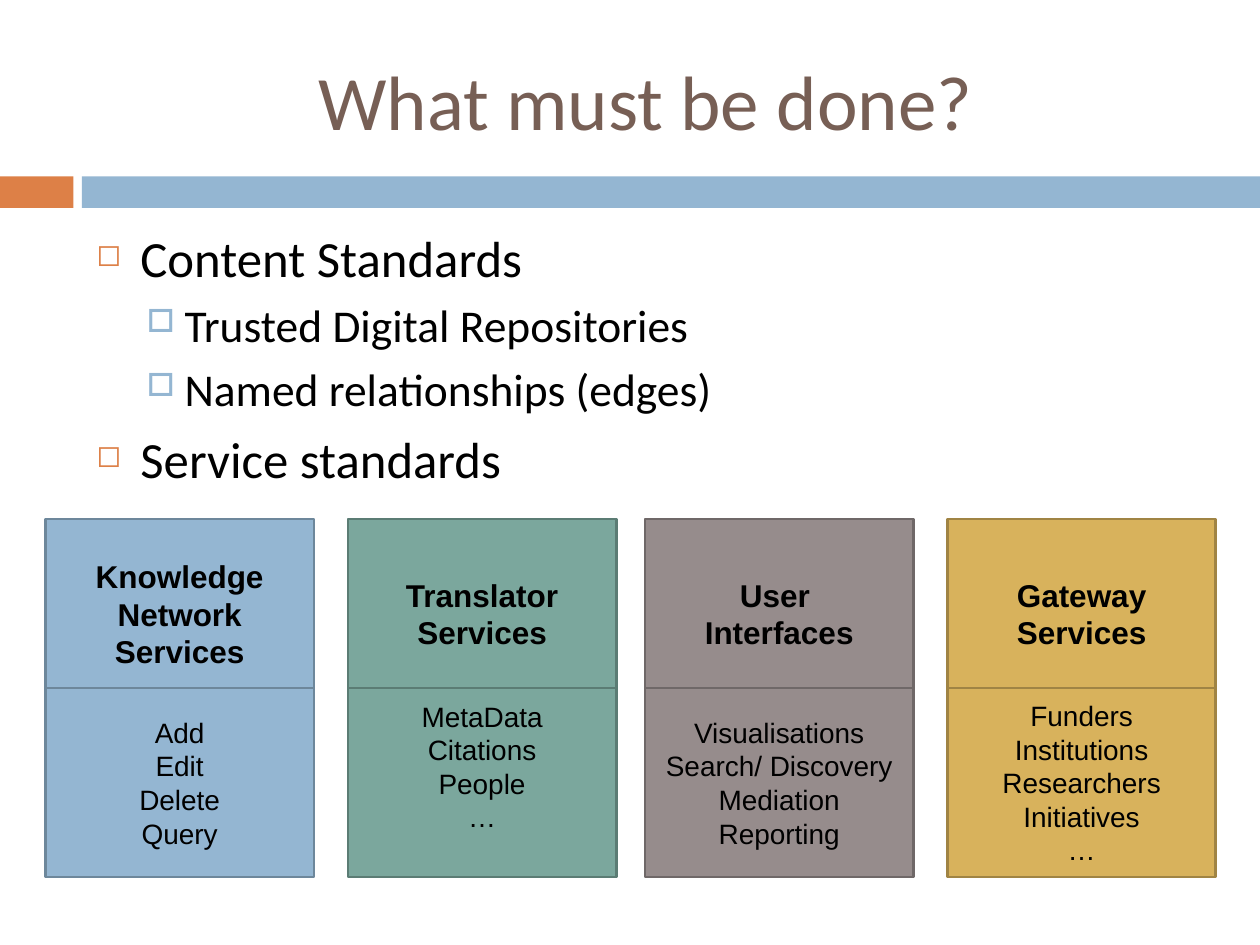
from lxml import etree
from pptx import Presentation
from pptx import util as u
from pptx.dml.color import RGBColor
from pptx.enum import shapes, text
from pptx.oxml import ns

COLORS = {
    "title": "775F55", "ink": "000000", "orange": "DD8047",
    "blue": "94B6D2", "blue_edge": "6D879B",
    "green": "7BA79D", "green_edge": "5B7C74",
    "taupe": "968C8C", "taupe_edge": "6F6868",
    "gold": "D8B25C", "gold_edge": "A08444",
}

# level: size, left indent, hanging indent, space before, mark, mark colour, mark %
BULLETS = [
    (29, 25.2, 25.2, 7, "◻", "orange", 60),
    (26, 50.4, 21.6, 5.5, "□", "blue", 70),
]

STANDARDS = [
    (0, "Content Standards"),
    (1, "Trusted Digital Repositories"),
    (1, "Named relationships (edges)"),
    (0, "Service standards"),
]

# left, colour, heading lines, detail lines, bottom inset of the details
SERVICES = [
    (26, "blue", ["Knowledge Network Services"],
     ["Add", "Edit", "Delete", "Query"], 3.6),
    (198.8, "green", ["Translator Services"],
     ["MetaData", "Citations", "People", "…"], 22),
    (368.6, "taupe", ["User ", "Interfaces"],
     ["Visualisations", "Search/ Discovery", "Mediation", "Reporting"], 3.6),
    (541.4, "gold", ["Gateway", "Services"],
     ["Funders", "Institutions", "Researchers", "Initiatives", "…"], 3.6),
]
CARD_WIDTH, CARD_HEIGHT = 153.4, 108
HEADING_TOP, DETAIL_TOP = 296.6, 393.2


def rgb(name):
    return RGBColor.from_string(COLORS[name])


class SlideWriter:
    heading_font = "Calibri"
    card_font = "Arial"

    def __init__(self, slide):
        self.slide = slide

    def style(self, paragraph, font, size, color="ink", bold=False):
        paragraph.font.name = font
        paragraph.font.size = u.Pt(size)
        paragraph.font.bold = bold
        paragraph.font.color.rgb = rgb(color)

    def text_frame(self, *place):
        frame = self.slide.shapes.add_textbox(*map(u.Pt, place)).text_frame
        frame.word_wrap = True
        return frame

    def title(self, words, *place):
        frame = self.text_frame(*place)
        frame.vertical_anchor = text.MSO_ANCHOR.MIDDLE
        heading = frame.paragraphs[0]
        heading.text = words
        heading.alignment = text.PP_ALIGN.CENTER
        self.style(heading, self.heading_font, 44, "title")

    def bullets(self, items, *place):
        frame = self.text_frame(*place)
        for i, (level, words) in enumerate(items):
            size, left, hang, before, mark, color, percent = BULLETS[level]
            item = frame.add_paragraph() if i else frame.paragraphs[0]
            item.text = words
            item.level = level
            item.space_before = u.Pt(before if i else 0)
            props = item._p.get_or_add_pPr()
            props.set("marL", str(u.Pt(left)))
            props.set("indent", str(-u.Pt(hang)))
            mark_color = etree.SubElement(props, ns.qn("a:buClr"))
            etree.SubElement(mark_color, ns.qn("a:srgbClr"), val=COLORS[color])
            etree.SubElement(props, ns.qn("a:buSzPct"), val=str(percent * 1000))
            etree.SubElement(props, ns.qn("a:buChar"), char=mark)
            self.style(item, self.heading_font, size)

    def block(self, color, *place):
        block = self.slide.shapes.add_shape(
            shapes.MSO_SHAPE.RECTANGLE, *map(u.Pt, place))
        block.shadow.inherit = False
        block.fill.solid()
        block.fill.fore_color.rgb = rgb(color)
        block.line.fill.background()
        return block

    def card(self, color, lines, size, bold, bottom_inset, *place):
        card = self.block(color, *place)
        card.line.color.rgb = rgb(color + "_edge")
        card.line.width = u.Pt(1.5)
        frame = card.text_frame
        frame.word_wrap = True
        frame.vertical_anchor = text.MSO_ANCHOR.MIDDLE
        frame.margin_bottom = u.Pt(bottom_inset)
        frame.text = "\n".join(lines)
        for line in frame.paragraphs:
            line.alignment = text.PP_ALIGN.CENTER
            self.style(line, self.card_font, size, bold=bold)


def main():
    deck = Presentation()
    deck.slide_width, deck.slide_height = u.Pt(720), u.Pt(540)
    writer = SlideWriter(deck.slides.add_slide(deck.slide_layouts[6]))

    # Band under the title
    writer.block("orange", 0, 100.8, 42, 18)
    writer.block("blue", 46.8, 100.8, 673.2, 18)

    # Title and standards
    writer.title("What must be done?", 48, 18, 642, 78)
    writer.bullets(STANDARDS, 48, 126, 642, 354)

    # Service cards: heading above, details below
    for left, color, heading, details, inset in SERVICES:
        writer.card(color, heading, 18, True, 3.6,
                    left, HEADING_TOP, CARD_WIDTH, CARD_HEIGHT)
        writer.card(color, details, 16, False, inset,
                    left, DETAIL_TOP, CARD_WIDTH, CARD_HEIGHT)

    deck.save("out.pptx")


if __name__ == "__main__":
    main()
